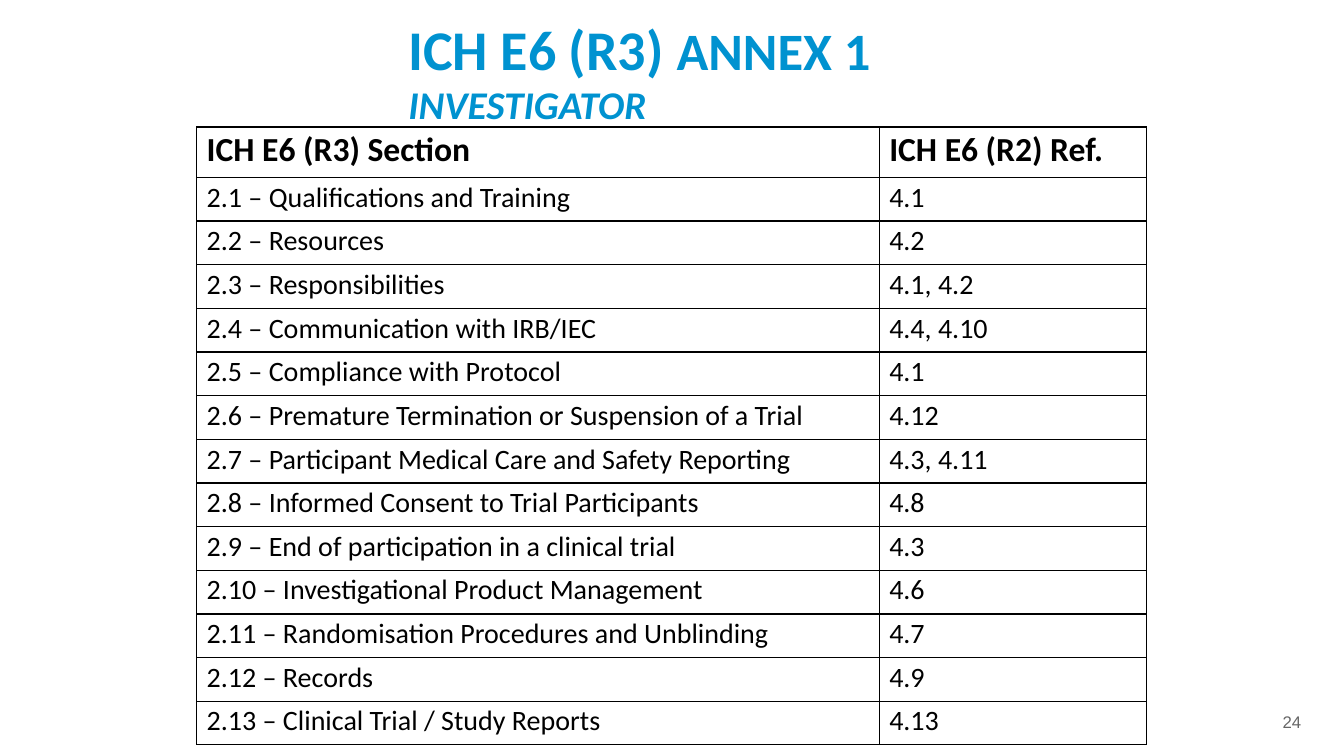
from lxml import etree
from pptx import Presentation
from pptx.dml.color import RGBColor
from pptx.enum import text as t
from pptx.oxml import ns
from pptx.util import Inches, Pt

COLORS = {"title": "0092D0", "text": "000000", "border": "000000",
          "number": "666666", "background": "FFFFFF"}

HEADER = ("ICH E6 (R3) Section", "ICH E6 (R2) Ref.")
SECTIONS = [
    ("Qualifications and Training", "4.1"),
    ("Resources", "4.2"),
    ("Responsibilities", "4.1, 4.2"),
    ("Communication with IRB/IEC", "4.4, 4.10"),
    ("Compliance with Protocol", "4.1"),
    ("Premature Termination or Suspension of a Trial", "4.12"),
    ("Participant Medical Care and Safety Reporting", "4.3, 4.11"),
    ("Informed Consent to Trial Participants", "4.8"),
    ("End of participation in a clinical trial", "4.3"),
    ("Investigational Product Management", "4.6"),
    ("Randomisation Procedures and Unblinding", "4.7"),
    ("Records", "4.9"),
    ("Clinical Trial / Study Reports", "4.13"),
]


def add_run(paragraph, content, size, color="text", font="Calibri",
            bold=False, italic=False):
    run = paragraph.add_run()
    run.text = content
    run.font.name = font
    run.font.size = Pt(size)
    run.font.bold = bold
    run.font.italic = italic
    run.font.color.rgb = RGBColor.from_string(COLORS[color])


def set_frame(frame, left=0, top=0):
    """Use tight margins and anchor the text at the top."""
    frame.margin_left, frame.margin_top = Inches(left), Inches(top)
    frame.margin_right = frame.margin_bottom = 0
    frame.vertical_anchor = t.MSO_ANCHOR.TOP
    frame.word_wrap = True


def set_line(paragraph, spacing):
    paragraph.alignment = t.PP_ALIGN.LEFT
    paragraph.line_spacing = Pt(spacing)
    paragraph.space_before = Pt(0)


def add_title(slide):
    title = slide.shapes.title
    title.left, title.top = Inches(4.04), Inches(0.14)
    title.width, title.height = Inches(4.67), Inches(1.14)
    frame = title.text_frame
    set_frame(frame, left=0.01, top=0.01)
    frame.auto_size = t.MSO_AUTO_SIZE.SHAPE_TO_FIT_TEXT
    heading, subheading = frame.paragraphs[0], frame.add_paragraph()
    set_line(heading, 47.2)
    add_run(heading, "ICH E6 (R3) ", 40, "title", bold=True)
    add_run(heading, "ANNEX 1", 37.5, "title", bold=True)
    set_line(subheading, 32.9)
    add_run(subheading, "INVESTIGATOR", 28, "title", bold=True, italic=True)


def add_slide_number(slide):
    box = slide.shapes.add_textbox(Inches(12.68), Inches(7.06),
                                   Inches(0.28), Inches(0.21))
    set_frame(box.text_frame, left=0.04)
    paragraph = box.text_frame.paragraphs[0]
    set_line(paragraph, 14.2)
    add_run(paragraph, "24", 12, "number", font="Arial")


def set_borders(cell):
    properties = cell._tc.get_or_add_tcPr()
    for position, side in enumerate(("lnL", "lnR", "lnT", "lnB")):
        line = etree.Element(ns.qn(f"a:{side}"), w=str(Pt(1)))
        fill = etree.SubElement(line, ns.qn("a:solidFill"))
        etree.SubElement(fill, ns.qn("a:srgbClr"), val=COLORS["border"])
        properties.insert(position, line)


def fill_cell(cell, content, size, bold):
    cell.margin_left, cell.margin_top = Inches(0.1), Inches(0.03)
    cell.margin_right = cell.margin_bottom = 0
    cell.vertical_anchor = t.MSO_ANCHOR.TOP
    cell.fill.background()
    set_borders(cell)
    add_run(cell.text_frame.paragraphs[0], content, size, bold=bold)


def add_section_table(slide):
    rows = [HEADER] + [(f"2.{number} – {name}", reference)
                       for number, (name, reference) in enumerate(SECTIONS, 1)]
    table = slide.shapes.add_table(len(rows), 2, Inches(1.95), Inches(1.26),
                                   Inches(9.42), Inches(6.13)).table
    table.first_row = table.horz_banding = False
    for column, width in zip(table.columns, (6.77, 2.65)):
        column.width = Inches(width)
    for index, values in enumerate(rows):
        is_header = index == 0
        table.rows[index].height = Inches(0.5 if is_header else 5.63 / len(SECTIONS))
        for column, value in enumerate(values):
            fill_cell(table.cell(index, column), value,
                      size=24 if is_header else 20, bold=is_header)


def main():
    presentation = Presentation()
    presentation.slide_width = Inches(13.33)
    presentation.slide_height = Inches(7.5)
    slide = presentation.slides.add_slide(presentation.slide_layouts[5])
    slide.background.fill.solid()
    slide.background.fill.fore_color.rgb = RGBColor.from_string(COLORS["background"])
    add_title(slide)
    add_slide_number(slide)
    add_section_table(slide)
    presentation.save("out.pptx")


if __name__ == "__main__":
    main()
